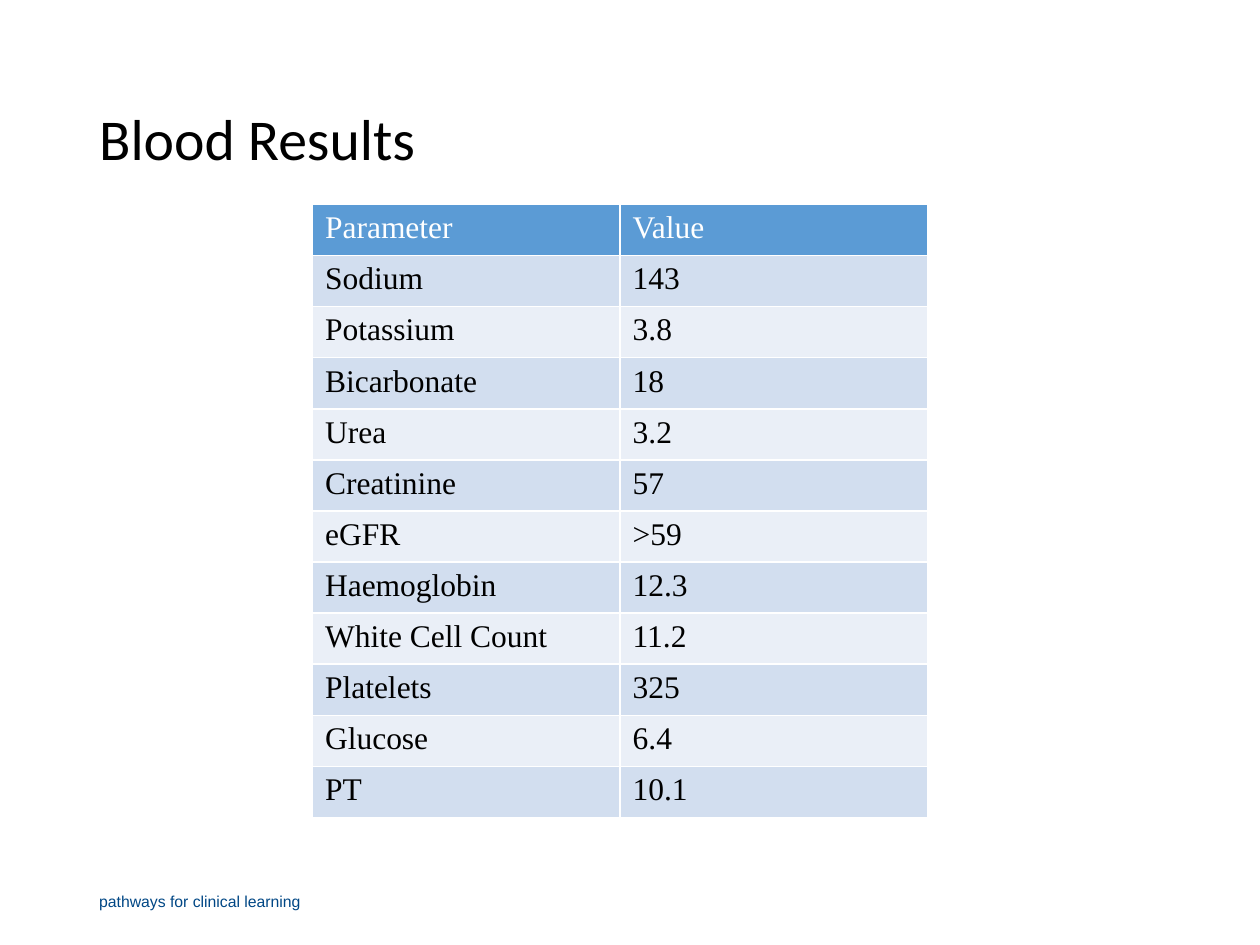
from lxml import etree
from pptx import Presentation
from pptx import util as u
from pptx.dml.color import RGBColor
from pptx.enum import text
from pptx.oxml.ns import qn

RESULTS = [
    ("Parameter", "Value"),
    ("Sodium", "143"),
    ("Potassium", "3.8"),
    ("Bicarbonate", "18"),
    ("Urea", "3.2"),
    ("Creatinine", "57"),
    ("eGFR", ">59"),
    ("Haemoglobin", "12.3"),
    ("White Cell Count", "11.2"),
    ("Platelets", "325"),
    ("Glucose", "6.4"),
    ("PT", "10.1"),
]
HEADER, BANDS = "5B9BD5", ("EAEFF7", "D2DEEF")
BLACK, WHITE, NAVY = "000000", "FFFFFF", "014785"


def rgb(color):
    return RGBColor.from_string(color)


def add_run(p, words, size, font, color):
    r = p.add_run()
    r.text = words
    r.font.size = u.Pt(size)
    r.font.name = font
    r.font.color.rgb = rgb(color)


def add_label(s, box, words, size, font, color, spacing=1.0):
    """Add a one-line text box, vertically centred; box is in centimetres."""
    tf = s.shapes.add_textbox(*map(u.Cm, box)).text_frame
    tf.word_wrap = True
    tf.vertical_anchor = text.MSO_ANCHOR.MIDDLE
    p = tf.paragraphs[0]
    p.line_spacing = spacing
    add_run(p, words, size, font, color)


def set_borders(cell, color, width):
    tc_pr = cell._tc.get_or_add_tcPr()
    for i, side in enumerate(("lnL", "lnR", "lnT", "lnB")):
        ln = etree.Element(qn(f"a:{side}"), w=str(u.Pt(width)))
        fill = etree.SubElement(ln, qn("a:solidFill"))
        etree.SubElement(fill, qn("a:srgbClr"), val=color)
        tc_pr.insert(i, ln)


def add_results_table(s, left, top, col_width, row_height):
    rows, cols = len(RESULTS), len(RESULTS[0])
    table = s.shapes.add_table(
        rows, cols, u.Cm(left), u.Cm(top),
        u.Cm(col_width * cols), u.Cm(row_height * rows)).table
    for row in table.rows:
        row.height = u.Cm(row_height)
    for i, values in enumerate(RESULTS):
        for j, value in enumerate(values):
            cell = table.cell(i, j)
            cell.fill.solid()
            cell.fill.fore_color.rgb = rgb(BANDS[i % 2] if i else HEADER)
            set_borders(cell, WHITE, 1)
            add_run(cell.text_frame.paragraphs[0], value, 18,
                    "Times New Roman", BLACK if i else WHITE)


def main():
    prs = Presentation()
    prs.slide_width, prs.slide_height = u.Cm(25.4), u.Cm(19.05)
    s = prs.slides.add_slide(prs.slide_layouts[6])
    add_label(s, (1.75, 1.02, 21.9, 3.68), "Blood Results",
              33, "Calibri", BLACK, spacing=0.9)
    add_results_table(s, left=6.3, top=4.12, col_width=6.2, row_height=1.03)
    add_label(s, (1.75, 17.65, 5.72, 1.02), "pathways for clinical learning",
              9, "Arial", NAVY)
    prs.save("out.pptx")


if __name__ == "__main__":
    main()
